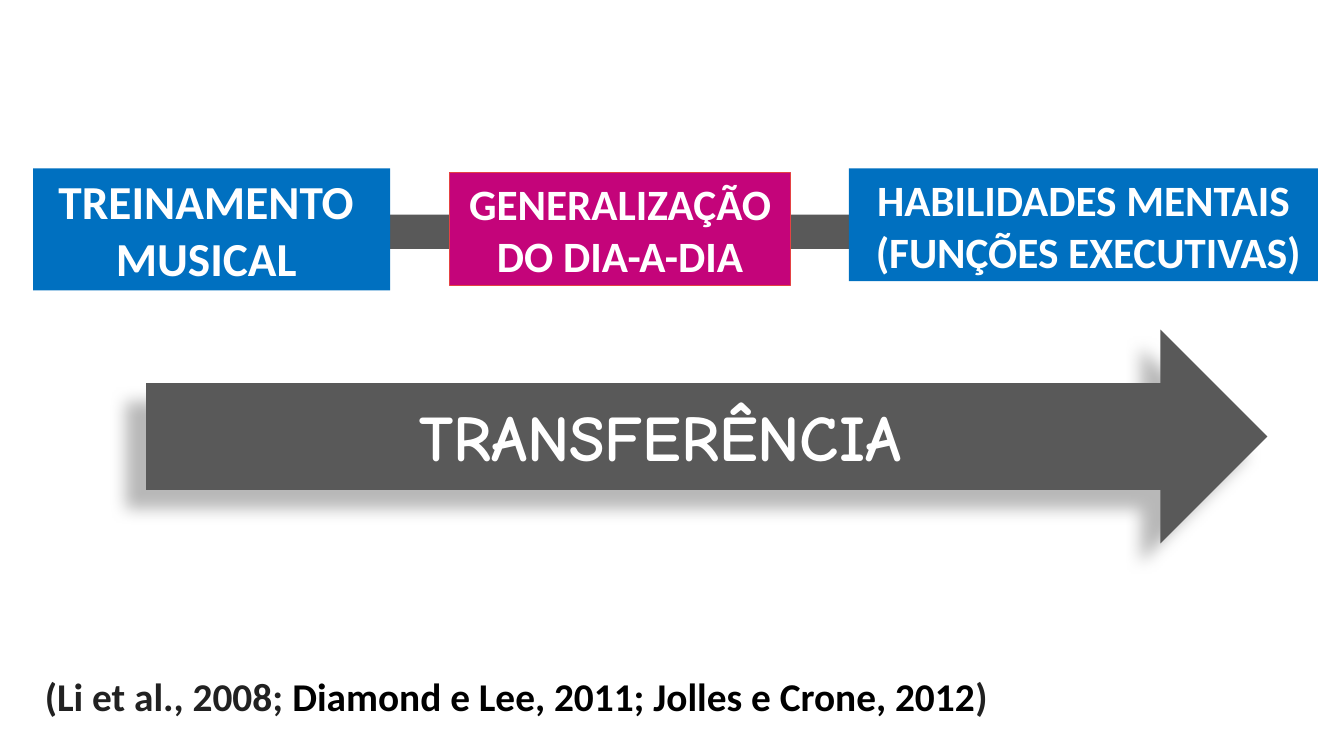
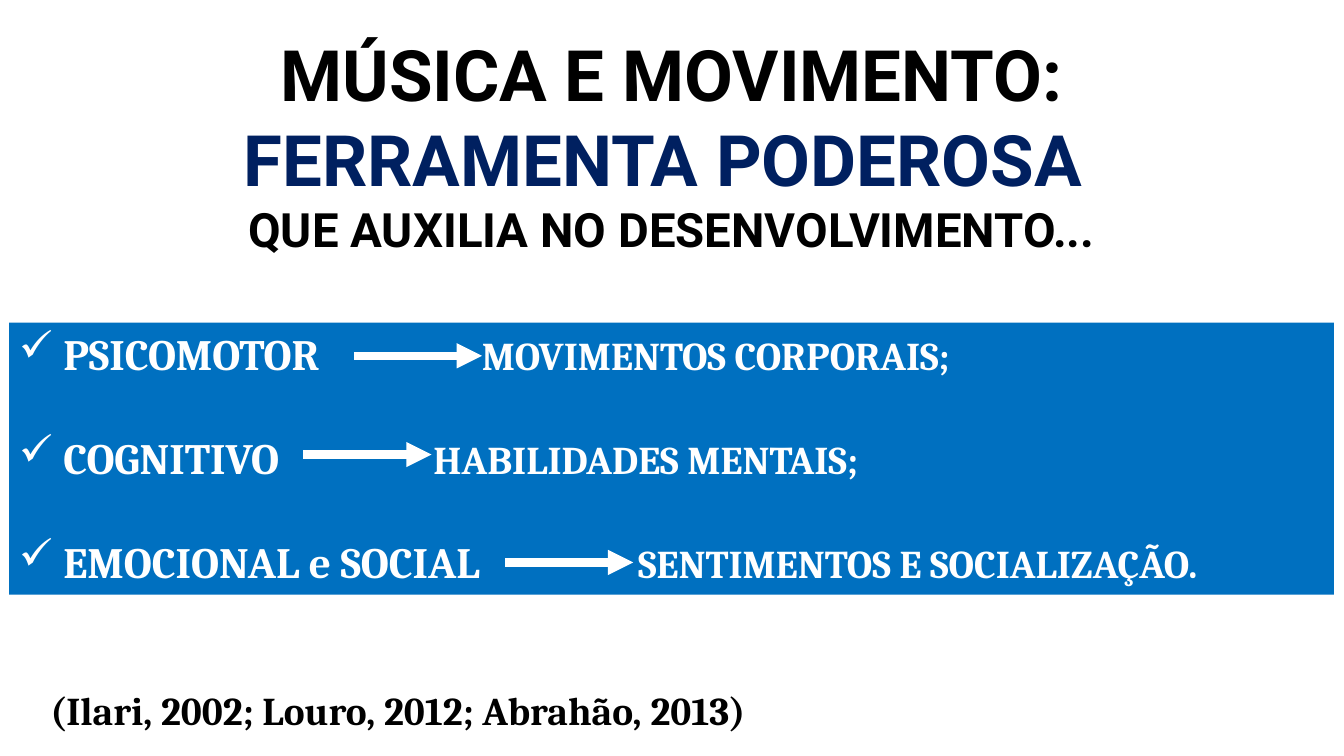
"""Two slides on how musical training transfers to development."""
from dataclasses import dataclass

from lxml import etree
from pptx import Presentation
from pptx.dml.color import RGBColor
from pptx.enum.shapes import MSO_CONNECTOR, MSO_SHAPE
from pptx.enum.text import MSO_ANCHOR, MSO_AUTO_SIZE, PP_ALIGN
from pptx.oxml.ns import qn
from pptx.util import Inches, Pt

RECTANGLE = MSO_SHAPE.RECTANGLE
RIGHT_ARROW = MSO_SHAPE.RIGHT_ARROW
STRAIGHT = MSO_CONNECTOR.STRAIGHT
CENTER = PP_ALIGN.CENTER
LEFT = PP_ALIGN.LEFT
TOP = MSO_ANCHOR.TOP
MIDDLE = MSO_ANCHOR.MIDDLE
NO_FIT = MSO_AUTO_SIZE.NONE
TITLE_ONLY, BLANK = 5, 6


@dataclass(frozen=True)
class Theme:
    """Colours, fonts and type sizes shared by the slides."""

    blue: str = "0070C0"
    magenta: str = "C4047A"
    red: str = "E44244"
    gray: str = "595959"
    navy: str = "002060"
    ink: str = "212121"
    black: str = "000000"
    white: str = "FFFFFF"
    sans: str = "Calibri"
    serif: str = "Cambria"
    heading: str = "Roboto"
    hand: str = "Comic Neue"
    title: float = 50.6
    banner: float = 46.4
    large: float = 33.8
    body: float = 30.9
    small: float = 28.1


THEME = Theme()


def rgb(color):
    """Return a colour object for a hex string."""
    return RGBColor.from_string(color)


def add_child(parent, tag, **attributes):
    """Append a DrawingML element and return it."""
    return etree.SubElement(parent, qn(tag), attributes)


def set_font(font, name, size, color):
    """Apply a bold font."""
    font.name = name
    font.size = Pt(size)
    font.bold = True
    font.color.rgb = rgb(color)


def prepare_frame(shape, anchor=TOP, inset=None):
    """Set wrapping, anchor and optional equal margins."""
    frame = shape.text_frame
    frame.word_wrap = True
    frame.auto_size = NO_FIT
    frame.vertical_anchor = anchor
    if inset is not None:
        frame.margin_left = frame.margin_right = Inches(inset)
        frame.margin_top = frame.margin_bottom = Inches(inset)
    return frame


def next_paragraph(frame, index):
    """Return the first paragraph or append a new one."""
    return frame.add_paragraph() if index else frame.paragraphs[0]


def write_lines(frame, lines, font, size, color):
    """Write centred lines in one style."""
    for index, line in enumerate(lines):
        para = next_paragraph(frame, index)
        para.text = line
        para.alignment = CENTER
        set_font(para.font, font, size, color)


def add_block(page, kind, box, fill, line=None):
    """Add a filled preset shape with an optional outline."""
    shape = page.shapes.add_shape(kind, *map(Inches, box))
    shape.shadow.inherit = False
    shape.fill.solid()
    shape.fill.fore_color.rgb = rgb(fill)
    if line:
        shape.line.color.rgb = rgb(line)
        shape.line.width = Pt(1)
    else:
        shape.line.fill.background()
    return shape


def add_label(page, box, lines, size, fill, line=None):
    """Add a coloured box with centred white text."""
    shape = add_block(page, RECTANGLE, box, fill, line)
    frame = prepare_frame(shape, MIDDLE, 0.04)
    write_lines(frame, lines, THEME.sans, size, THEME.white)


def add_shadow(shape):
    """Give a shape a soft shadow to the lower left."""
    effects = shape._element.spPr.find(qn("a:effectLst"))
    shadow = add_child(effects, "a:outerShdw", blurRad=str(Pt(11.8)),
                       dist=str(Pt(19.7)), dir=str(141 * 60000),
                       algn="ctr", rotWithShape="0")
    color = add_child(shadow, "a:srgbClr", val=THEME.black)
    add_child(color, "a:alpha", val="28000")


def add_text(page, box, anchor=TOP, inset=None):
    """Add an empty text box and return its frame."""
    shape = page.shapes.add_textbox(*map(Inches, box))
    return prepare_frame(shape, anchor, inset)


def add_citation(page, box, font, spans):
    """Add a citation built from coloured spans."""
    para = add_text(page, box).paragraphs[0]
    para.alignment = CENTER
    set_font(para.font, font, THEME.small, THEME.black)
    for text, color in spans:
        span = para.add_run()
        span.text = text
        span.font.color.rgb = rgb(color)


def add_title(page, box, lines):
    """Format the title placeholder with one style per line."""
    title = page.shapes.title
    title.left, title.top, title.width, title.height = map(Inches, box)
    frame = prepare_frame(title)
    for index, (text, size, color) in enumerate(lines):
        para = next_paragraph(frame, index)
        para.text = text
        para.alignment = CENTER
        set_font(para.font, THEME.heading, size, color)


def write_check_item(para, area, effect, tab):
    """Write a checked area with its effect at a tab stop."""
    properties = para._p.get_or_add_pPr()
    properties.set("marL", str(Inches(0.44)))
    properties.set("indent", str(-Inches(0.44)))
    add_child(properties, "a:buChar", char="✓")
    stops = add_child(properties, "a:tabLst")
    add_child(stops, "a:tab", pos=str(Inches(tab)), algn="l")
    para.alignment = LEFT
    set_font(para.font, THEME.serif, THEME.body, THEME.white)
    para.add_run().text = area
    span = para.add_run()
    span.text = "\t" + effect
    span.font.size = Pt(THEME.small)


def add_arrow(page, left, top, length):
    """Add a thick white arrow pointing right."""
    arrow = page.shapes.add_connector(
        STRAIGHT, *map(Inches, (left, top, left + length, top)))
    arrow.line.color.rgb = rgb(THEME.white)
    arrow.line.width = Pt(6)
    add_child(arrow.line._get_or_add_ln(), "a:tailEnd", type="triangle")
    add_child(arrow._element.spPr, "a:effectLst")


def build_transfer(deck):
    """Build the slide on transfer from music to mental skills."""
    page = deck.slides.add_slide(deck.slide_layouts[BLANK])
    add_block(page, RECTANGLE, (0.61, 2.13, 11.96, 0.34), THEME.gray)
    add_label(page, (0.33, 1.67, 3.54, 1.21), ["TREINAMENTO ", "MUSICAL "],
              THEME.large, THEME.blue)
    add_label(page, (4.46, 1.71, 3.38, 1.12), ["GENERALIZAÇÃO DO DIA-A-DIA"],
              THEME.body, THEME.magenta, THEME.red)
    add_label(page, (8.42, 1.67, 4.65, 1.12),
              ["HABILIDADES MENTAIS", " (FUNÇÕES EXECUTIVAS)"],
              THEME.body, THEME.blue)
    add_shadow(add_block(page, RIGHT_ARROW, (1.45, 3.27, 11.12, 2.12),
                         THEME.gray))
    add_citation(page, (0.29, 6.62, 9.66, 0.57), THEME.sans, [
        ("(Li et al., 2008;", THEME.ink),
        (" Diamond e Lee, 2011; Jolles e Crone, 2012", THEME.black),
        (")", THEME.ink)])
    frame = add_text(page, (1.82, 3.89, 9.69, 0.86), MIDDLE, 0.04)
    write_lines(frame, ["TRANSFERÊNCIA "], THEME.hand, THEME.banner,
                THEME.white)


def build_development(deck):
    """Build the slide on the areas that music helps develop."""
    page = deck.slides.add_slide(deck.slide_layouts[TITLE_ONLY])
    add_title(page, (0.73, 0.25, 11.87, 2.37), [
        ("MÚSICA E MOVIMENTO:", THEME.title, THEME.black),
        ("FERRAMENTA PODEROSA ", THEME.title, THEME.navy),
        ("QUE AUXILIA NO DESENVOLVIMENTO...", THEME.large, THEME.black)])
    panel = add_block(page, RECTANGLE, (0.09, 3.2, 13.14, 2.7), THEME.blue)
    frame = prepare_frame(panel)
    areas = [
        ("PSICOMOTOR", "MOVIMENTOS CORPORAIS;", 4.59, 3.51, 3.53),
        ("COGNITIVO", "HABILIDADES MENTAIS;", 4.11, 3.01, 4.51),
        ("EMOCIONAL e SOCIAL", "SENTIMENTOS E SOCIALIZAÇÃO.",
         6.14, 5.01, 5.58)]
    for index, (area, effect, tab, left, top) in enumerate(areas):
        para = next_paragraph(frame, index)
        write_check_item(para, area, effect, tab)
        if index:
            para.space_before = Pt(37)
        add_arrow(page, left, top, 1.27)
    add_citation(page, (0.11, 6.76, 7.76, 0.57), THEME.serif, [
        ("(Ilari, 2002; Louro, 2012; Abrahão, 2013) ", THEME.black)])


def main():
    """Build and save the deck."""
    deck = Presentation()
    deck.slide_width = Inches(13.33)
    deck.slide_height = Inches(7.5)
    build_transfer(deck)
    build_development(deck)
    deck.save("out.pptx")


if __name__ == "__main__":
    main()
